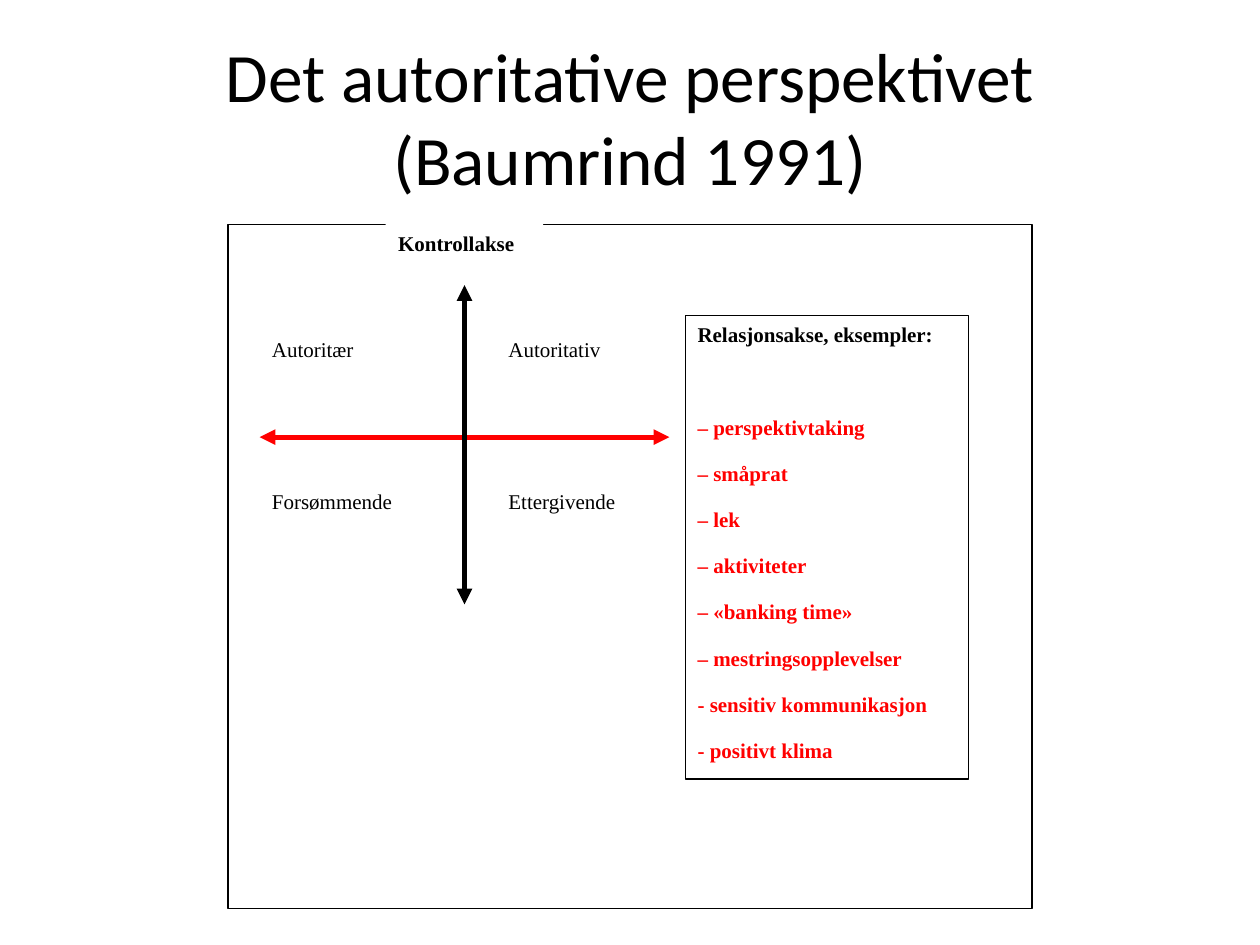
from dataclasses import dataclass
from typing import Optional

from lxml.etree import SubElement
from pptx import Presentation
from pptx.dml.color import RGBColor
from pptx.enum.shapes import MSO_CONNECTOR, MSO_SHAPE
from pptx.enum.text import MSO_ANCHOR, PP_ALIGN
from pptx.oxml.ns import qn
from pptx.util import Inches, Pt

HUES = {"ink": "000000", "paper": "FFFFFF", "red": "FF0000"}
BODY = {"name": "Times New Roman", "size": Pt(12)}
HEAD = {"name": "Calibri", "size": Pt(39.6)}
GAP = {"space_before": Pt(6), "space_after": Pt(6)}

# Grid of 51 columns and 45 rows that fills the frame
WIDE, HIGH = 10, 7.5
LEFT, TOP = 1.81, 1.78
COLS, ROWS = 51, 45
COL, ROW = 6.38 / COLS, 5.43 / ROWS


@dataclass
class Box:
    col: float
    row: float
    cols: float
    rows: float
    text: str = ""
    bold: bool = False
    fill: Optional[str] = "paper"
    line: Optional[str] = None


@dataclass
class Axis:
    start: tuple
    end: tuple
    hue: str


def hue(key: str) -> RGBColor:
    return RGBColor.from_string(HUES[key])


def spot(col: float, row: float) -> tuple:
    return Inches(LEFT + col * COL), Inches(TOP + row * ROW)


def style(item, form: dict) -> None:
    for key, value in form.items():
        setattr(item, key, value)


def write(para, text: str, font: dict, tint: str, form: dict) -> None:
    run = para.add_run()
    run.text = text
    style(run.font, font)
    run.font.color.rgb = hue(tint)
    style(para, form)


def draw_box(slide, box: Box):
    shape = slide.shapes.add_shape(
        MSO_SHAPE.RECTANGLE, *spot(box.col, box.row),
        Inches(box.cols * COL), Inches(box.rows * ROW))
    shape.shadow.inherit = False
    if box.fill:
        shape.fill.solid()
        shape.fill.fore_color.rgb = hue(box.fill)
    else:
        shape.fill.background()
    if box.line:
        shape.line.color.rgb = hue(box.line)
        shape.line.width = Pt(0.75)
    else:
        shape.line.fill.background()
    if box.text:
        frame = shape.text_frame
        style(frame, {"word_wrap": True, "vertical_anchor": MSO_ANCHOR.TOP})
        write(frame.paragraphs[0], box.text, BODY | {"bold": box.bold},
              "ink", GAP | {"alignment": PP_ALIGN.LEFT})
    return shape


def draw_axis(slide, axis: Axis):
    line = slide.shapes.add_connector(
        MSO_CONNECTOR.STRAIGHT, *spot(*axis.start), *spot(*axis.end))
    line.line.color.rgb = hue(axis.hue)
    line.line.width = Pt(3)
    edge = line.line._get_or_add_ln()
    for tag in ("a:headEnd", "a:tailEnd"):
        SubElement(edge, qn(tag), type="triangle")
    SubElement(line._element.spPr, qn("a:effectLst"))
    return line


FRAME = Box(0, 0, COLS, ROWS, fill=None, line="ink")
CROWN = Box(10, 0, 10, 4, "Kontrollakse", bold=True)
STYLES = [
    Box(2, 7, 9, 4, "Autoritær"),
    Box(17, 7, 10, 5, "Autoritativ"),
    Box(2, 17, 10, 7, "Forsømmende"),
    Box(17, 17, 10, 2.5, "Ettergivende"),
]
PANEL = Box(29, 6, 18, 30.5, "Relasjonsakse, eksempler:", bold=True, line="ink")
CASES = [
    "– perspektivtaking", "– småprat", "– lek", "– aktiviteter",
    "– «banking time»", "– mestringsopplevelser",
    "- sensitiv kommunikasjon", "- positivt klima",
]


def main() -> None:
    deck = Presentation()
    style(deck, {"slide_width": Inches(WIDE), "slide_height": Inches(HIGH)})
    slide = deck.slides.add_slide(deck.slide_layouts[6])

    # Title
    title = slide.shapes.add_textbox(
        Inches(0.05 * WIDE), Inches(0.04 * HIGH),
        Inches(0.9 * WIDE), Inches(HIGH / 6)).text_frame
    style(title, {"word_wrap": True, "vertical_anchor": MSO_ANCHOR.MIDDLE})
    write(title.paragraphs[0], "Det autoritative perspektivet (Baumrind 1991)",
          HEAD, "ink", {"alignment": PP_ALIGN.CENTER})

    # Frame and the two axes
    draw_box(slide, FRAME)
    draw_axis(slide, Axis((2, 14), (28, 14), "red"))
    crown = draw_box(slide, CROWN)
    stem = draw_axis(slide, Axis((15, 4), (15, 25), "ink"))
    stem.begin_connect(crown, 2)

    # Parenting styles
    for box in STYLES:
        draw_box(slide, box)

    # Examples, set off from their heading by a wider gap
    panel = draw_box(slide, PANEL).text_frame
    for rank, case in enumerate(CASES):
        form = GAP | {"alignment": PP_ALIGN.LEFT}
        if rank == 0:
            form["space_before"] = Pt(32.4)
        write(panel.add_paragraph(), case, BODY | {"bold": True}, "red", form)

    deck.save("out.pptx")


if __name__ == "__main__":
    main()
